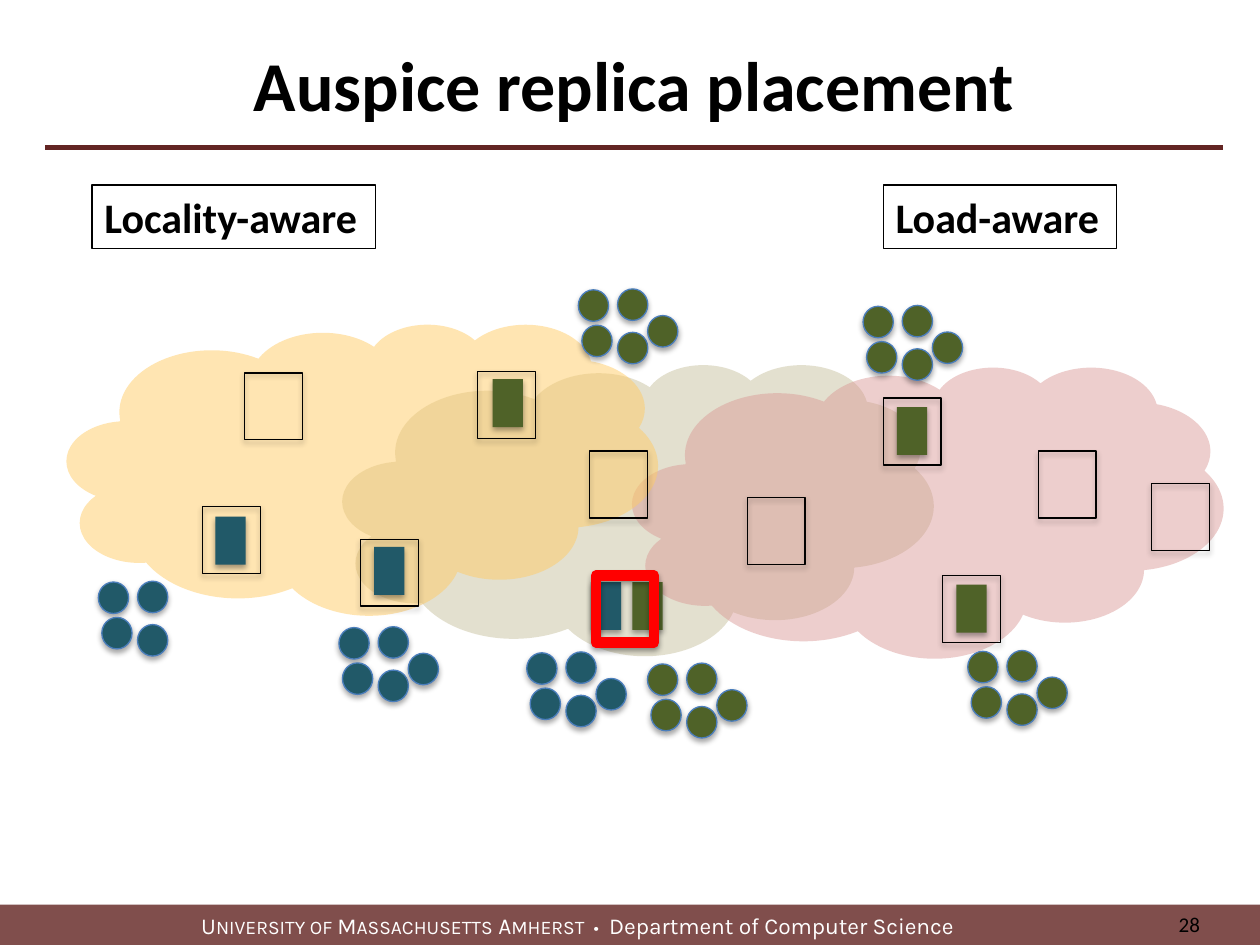
"""Build the slide on locality-aware and load-aware replica placement."""
import pptx
import pptx.dml.color
import pptx.enum.shapes
import pptx.enum.text
import pptx.oxml
import pptx.oxml.ns
import pptx.util

Pt = pptx.util.Pt
RGBColor = pptx.dml.color.RGBColor
SHAPE = pptx.enum.shapes.MSO_SHAPE
ALIGN = pptx.enum.text.PP_ALIGN
MIDDLE = pptx.enum.text.MSO_ANCHOR.MIDDLE

BLACK = RGBColor(0, 0, 0)
WHITE = RGBColor(0xFF, 0xFF, 0xFF)
RED = RGBColor(0xFF, 0, 0)
MAROON = RGBColor(0x63, 0x25, 0x23)
TEAL = RGBColor(0x21, 0x59, 0x68)
GREEN = RGBColor(0x4F, 0x62, 0x28)
BLUE = RGBColor(0x4B, 0x7E, 0xBC)
KHAKI = RGBColor(0xC4, 0xBD, 0x97)
ROSE = RGBColor(0xD9, 0x96, 0x94)
AMBER = RGBColor(0xFF, 0xCC, 0x66)

TITLE = "Auspice replica placement"
PAGE_NUMBER = "28"
FOOTER = [("U", 13), ("NIVERSITY OF ", 11), ("M", 13), ("ASSACHUSETTS", 11),
          (" A", 13), ("MHERST  • ", 11), (" Department of Computer Science", 13)]
LABELS = [("Locality-aware", 52.6, 162), ("Load-aware", 504.7, 133.2)]

CLOUD_SIZE = (337.7, 166.3)
CLOUDS = [(195.8, 208.1, KHAKI, 46), (361.4, 209.5, ROSE, 46), (38.2, 185, AMBER, 50)]

CLIENT_SIZE = (17.3, 18)
CLIENT_OFFSETS = [(0, 0), (2, 20.2), (22.4, 24.3), (22.4, -0.5), (39.6, 14.7)]
CLIENT_CLUSTERS = [
    (56.2, 332.6, TEAL, 4), (193.7, 358.6, TEAL, 5), (301, 373, TEAL, 5),
    (553, 372.2, GREEN, 5), (493.2, 175, GREEN, 5), (330.5, 165.6, GREEN, 5),
    (370, 379.4, GREEN, 5),
]

SITE_SIZE = (33.1, 38.2)
SITES = [
    (115.9, 289.4), (205.9, 308.2), (341.3, 328.3), (538.6, 329), (272.9, 212.4),
    (504.7, 227.5), (427, 284.4), (139.7, 213.1), (337, 257.8), (593.3, 257.8),
    (658.1, 276.5),
]
SHARED_SITE = (340.6, 329)

REPLICA_SIZE = (17.3, 27.4)
REPLICAS = [
    (123.1, 295.2, TEAL), (213.8, 312.5, TEAL), (337.7, 332.6, TEAL),
    (546.5, 334.1, GREEN), (512.6, 232.6, GREEN), (281.5, 216.7, GREEN),
    (361.4, 332.6, GREEN),
]


def add_shape(slide, kind, position, size, fill=None, line=None, width=0.75,
              shadow=True, opacity=None):
    shape = slide.shapes.add_shape(kind, *map(Pt, (*position, *size)))
    if fill is None:
        shape.fill.background()
    else:
        shape.fill.solid()
        shape.fill.fore_color.rgb = fill
    if opacity is not None:
        color = shape.fill._xPr.find(".//" + pptx.oxml.ns.qn("a:srgbClr"))
        alpha = color.makeelement(pptx.oxml.ns.qn("a:alpha"), {"val": str(opacity * 1000)})
        color.append(alpha)
    if line is None:
        shape.line.fill.background()
    else:
        shape.line.color.rgb = line
        shape.line.width = Pt(width)
    if not shadow:
        shape.shadow.inherit = False
    return shape


def write(shape, runs, color, font, align, bold=False):
    paragraph = shape.text_frame.paragraphs[0]
    paragraph.alignment = align
    for text, size in runs:
        run = paragraph.add_run()
        run.text = text
        run.font.size = Pt(size)
        run.font.name = font
        run.font.bold = bold
        run.font.color.rgb = color


def add_frame(slide):
    rule = slide.shapes.add_connector(
        pptx.enum.shapes.MSO_CONNECTOR.STRAIGHT, Pt(26), Pt(84.4), Pt(699), Pt(84.4))
    rule.line.color.rgb = MAROON
    rule.line.width = Pt(3)
    properties = rule._element.spPr
    properties.append(properties.makeelement(pptx.oxml.ns.qn("a:effectLst"), {}))

    footer = add_shape(slide, SHAPE.RECTANGLE, (0, 517), (720, 23.8), MAROON,
                       shadow=False, opacity=81)
    footer.text_frame.margin_left = Pt(115)
    footer.text_frame.vertical_anchor = MIDDLE
    write(footer, FOOTER, WHITE, "Karla", ALIGN.LEFT)

    title = slide.shapes.title
    title.left, title.top, title.width, title.height = map(Pt, (26, 15, 672.5, 65.5))
    title.text_frame.vertical_anchor = MIDDLE
    write(title, [(TITLE, 40)], BLACK, "Calibri", ALIGN.CENTER, True)

    number = slide.shapes.add_textbox(*map(Pt, (525, 513.4, 167.8, 28.8)))
    number.text_frame.word_wrap = True
    number.text_frame.vertical_anchor = MIDDLE
    write(number, [(PAGE_NUMBER, 12)], BLACK, "Calibri", ALIGN.RIGHT)


def add_map(slide):
    for left, top, color, opacity in CLOUDS:
        add_shape(slide, SHAPE.CLOUD, (left, top), CLOUD_SIZE, color,
                  shadow=False, opacity=opacity)
    for left, top, color, count in CLIENT_CLUSTERS:
        for across, down in CLIENT_OFFSETS[:count]:
            add_shape(slide, SHAPE.OVAL, (left + across, top + down), CLIENT_SIZE, color, BLUE)
    for site in SITES:
        add_shape(slide, SHAPE.RECTANGLE, site, SITE_SIZE, line=BLACK)
    for left, top, color in REPLICAS:
        add_shape(slide, SHAPE.RECTANGLE, (left, top), REPLICA_SIZE, color)
    for text, left, width in LABELS:
        label = add_shape(slide, SHAPE.RECTANGLE, (left, 105.8), (width, 36.4),
                          line=BLACK, shadow=False)
        label.text_frame.word_wrap = False
        label.text_frame.vertical_anchor = MIDDLE
        write(label, [(text, 24)], BLACK, "Calibri", ALIGN.LEFT, True)
    add_shape(slide, SHAPE.RECTANGLE, SHARED_SITE, SITE_SIZE, line=RED, width=6)


def main():
    presentation = pptx.Presentation()
    presentation.slide_width, presentation.slide_height = Pt(720), Pt(540)
    slide = presentation.slides.add_slide(presentation.slide_layouts[5])
    add_frame(slide)
    add_map(slide)
    presentation.save("out.pptx")


if __name__ == "__main__":
    main()
